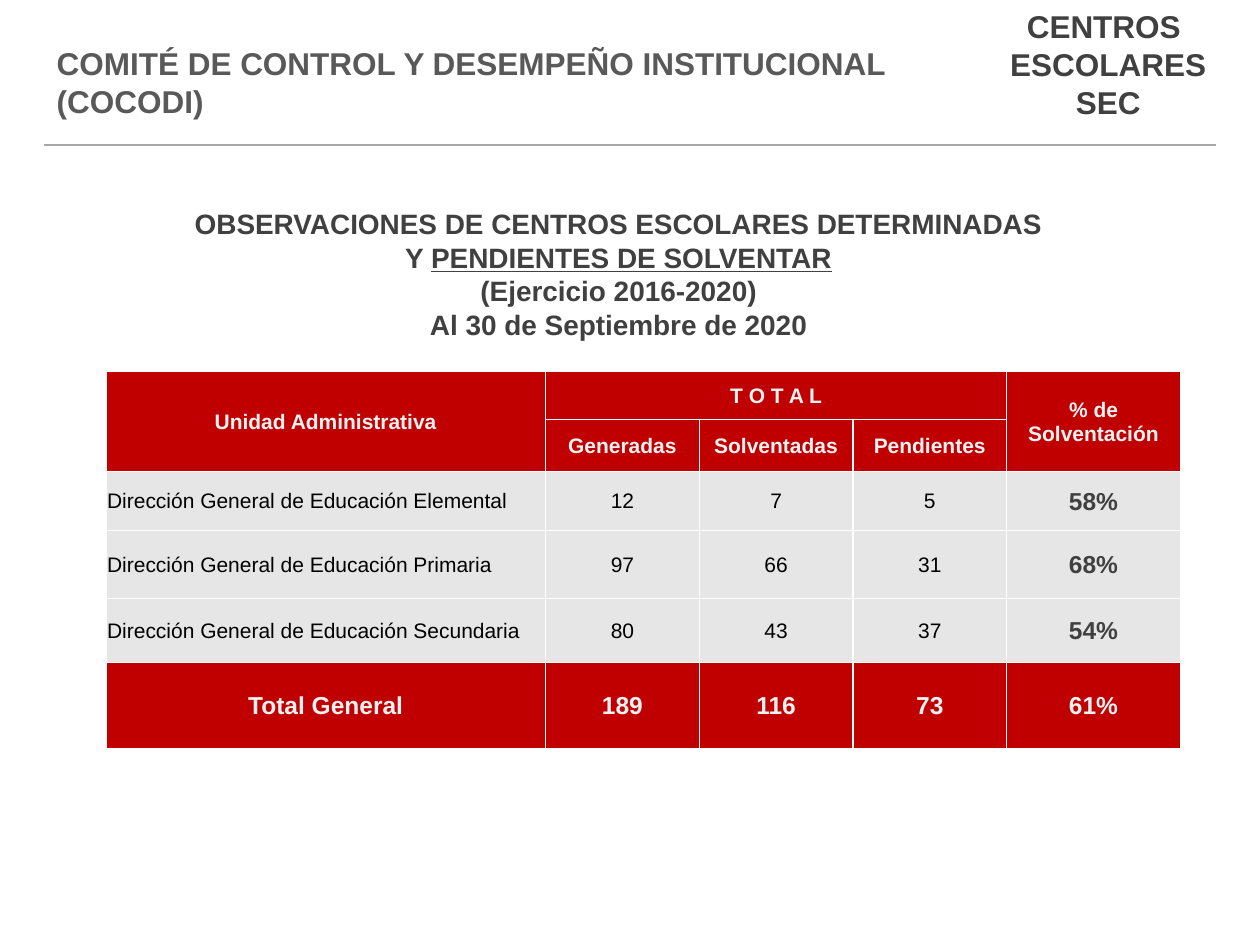
"""Build the slide on school-centre observations still pending."""
from lxml.etree import SubElement
from pptx import Presentation
from pptx.dml.color import RGBColor
from pptx.enum.shapes import MSO_CONNECTOR, MSO_SHAPE
from pptx.enum.text import MSO_ANCHOR, MSO_AUTO_SIZE, PP_ALIGN
from pptx.oxml.ns import qn
from pptx.util import Inches, Pt

COLORS = {
    "white": "FFFFFF", "dark": "404040", "title": "595959", "rule": "A6A6A6",
    "red": "C00000", "light": "F2F2F2", "gray": "E7E6E6", "black": "000000",
}


def grid(*units):
    """Turn grid columns or rows, a hundred to the slide's width, into lengths."""
    return [Inches(unit / 10) for unit in units]


def write(frame, text, size=12, color="dark", bold=True, align=PP_ALIGN.CENTER,
          anchor=MSO_ANCHOR.MIDDLE, underlined=None):
    """Fill a text frame, one paragraph a line, underlining one phrase."""
    frame.word_wrap = True
    frame.vertical_anchor = anchor
    for index, line in enumerate(text.split("\n")):
        paragraph = frame.add_paragraph() if index else frame.paragraphs[0]
        paragraph.alignment = align
        pieces = line.partition(underlined) if underlined else [line]
        for piece in filter(None, pieces):
            run = paragraph.add_run()
            run.text = piece
            run.font.name = "Arial"
            run.font.size = Pt(size)
            run.font.bold = bold
            run.font.underline = piece == underlined
            run.font.color.rgb = RGBColor.from_string(COLORS[color])


presentation = Presentation()
presentation.slide_width, presentation.slide_height = grid(100, 75)
slide = presentation.slides.add_slide(presentation.slide_layouts[5])

title = slide.shapes.title
title.left, title.top, title.width, title.height = grid(3.5, 3, 70.2, 7.1)
write(title.text_frame, "COMITÉ DE CONTROL Y DESEMPEÑO INSTITUCIONAL (COCODI)",
      size=18, color="title", align=PP_ALIGN.LEFT, anchor=MSO_ANCHOR.TOP)
title.text_frame.auto_size = MSO_AUTO_SIZE.NONE

heading = slide.shapes.add_textbox(*grid(10.3, 15.9, 77.6, 11.8))
write(heading.text_frame,
      "OBSERVACIONES DE CENTROS ESCOLARES DETERMINADAS\n"
      "Y PENDIENTES DE SOLVENTAR\n"
      "(Ejercicio 2016-2020)\n"
      "Al 30 de Septiembre de 2020",
      size=16, anchor=MSO_ANCHOR.TOP, underlined="PENDIENTES DE SOLVENTAR")

section = slide.shapes.add_shape(MSO_SHAPE.RECTANGLE, *grid(77.2, 0, 21.5, 10.1))
section.shadow.inherit = False
section.fill.solid()
section.fill.fore_color.rgb = RGBColor.from_string(COLORS["white"])
section.line.fill.background()
write(section.text_frame, "CENTROS \nESCOLARES\nSEC", size=18)

rule = slide.shapes.add_connector(MSO_CONNECTOR.STRAIGHT, *grid(3.5, 11.5, 96.5, 11.5))
rule.line.color.rgb = RGBColor.from_string(COLORS["rule"])
rule.line.width = Pt(1.5)
SubElement(rule.element.spPr, qn("a:effectLst"))

rows = [
    ["Unidad Administrativa", "T O T A L", "", "", "% de Solventación"],
    ["", "Generadas", "Solventadas", "Pendientes", ""],
    ["Dirección General de Educación Elemental", "12", "7", "5", "58%"],
    ["Dirección General de Educación Primaria", "97", "66", "31", "68%"],
    ["Dirección General de Educación Secundaria", "80", "43", "37", "54%"],
    ["Total General", "189", "116", "73", "61%"],
]
column_widths = grid(34.9, 12.2, 12.2, 12.2, 13.8)
row_heights = grid(3.8, 4.1, 4.7, 5.4, 5.1, 6.8)
left, top = grid(8.4, 29.5)
table = slide.shapes.add_table(len(rows), len(column_widths), left, top,
                               sum(column_widths), sum(row_heights)).table
for column, width in zip(table.columns, column_widths):
    column.width = width
for row, height in zip(table.rows, row_heights):
    row.height = height
for first, last in [((0, 0), (1, 0)), ((0, 1), (0, 3)), ((0, 4), (1, 4))]:
    table.cell(*first).merge(table.cell(*last))

for row_index, values in enumerate(rows):
    is_total = row_index == len(rows) - 1
    is_body = row_index > 1 and not is_total
    for column_index, value in enumerate(values):
        is_percent = column_index == len(values) - 1
        cell = table.cell(row_index, column_index)
        cell.margin_left, cell.margin_top, cell.margin_right, cell.margin_bottom = grid(0.1, 0.1, 0.1, 0)
        cell.vertical_anchor = MSO_ANCHOR.MIDDLE
        properties = cell._tc.get_or_add_tcPr()
        for side in ("lnL", "lnR", "lnT", "lnB"):
            border = SubElement(properties, qn(f"a:{side}"), w=str(Pt(1)))
            fill = SubElement(border, qn("a:solidFill"))
            SubElement(fill, qn("a:srgbClr"), val=COLORS["white"])
        cell.fill.solid()
        cell.fill.fore_color.rgb = RGBColor.from_string(COLORS["gray" if is_body else "red"])
        if not value:
            continue
        body_color = "dark" if is_percent else "black"
        write(cell.text_frame, value,
              size=14 if is_total or (is_body and is_percent) else 12,
              color=body_color if is_body else "light",
              bold=is_percent or not is_body,
              align=PP_ALIGN.LEFT if is_body and column_index == 0 else PP_ALIGN.CENTER)

presentation.save("out.pptx")
